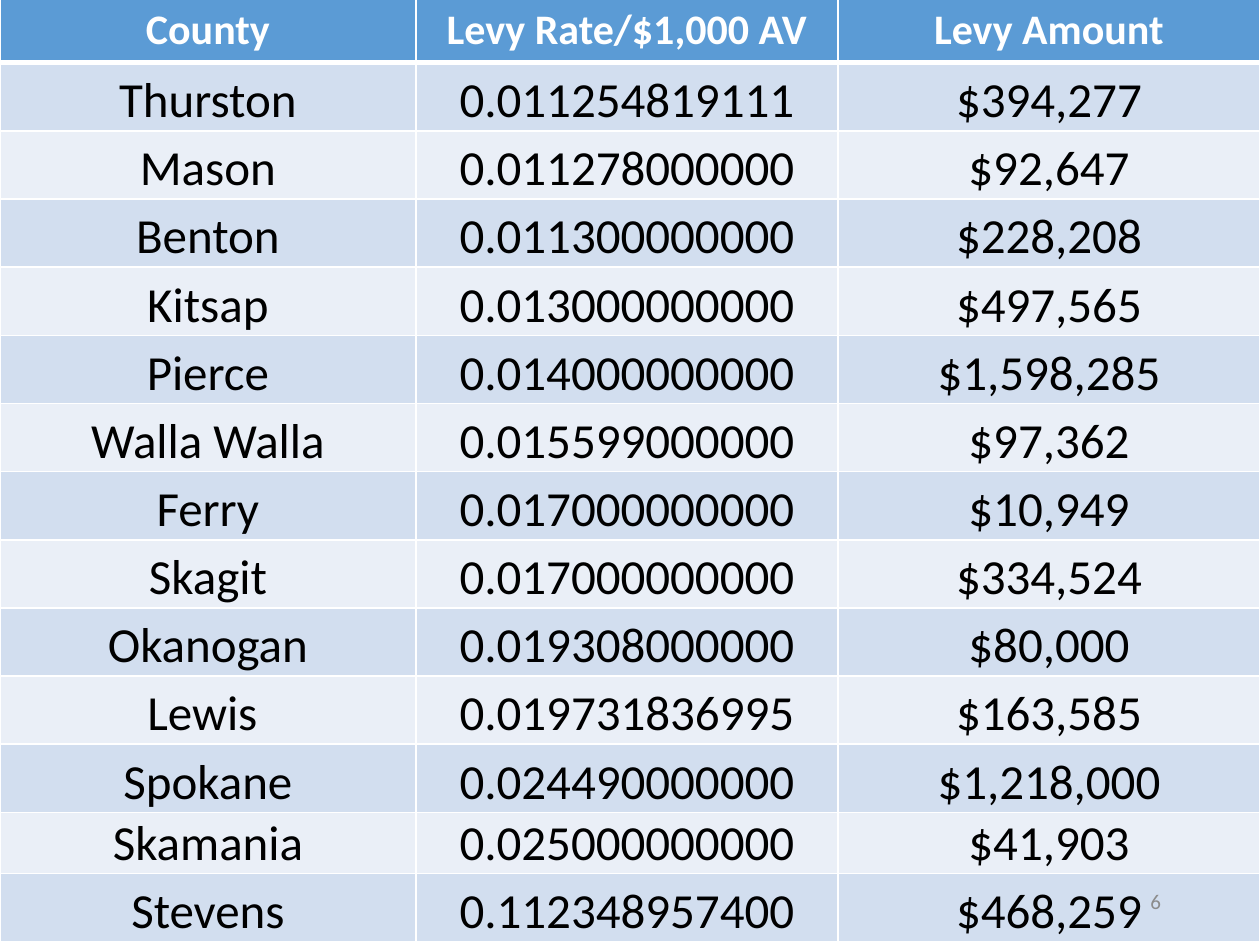
import pptx
import pptx.dml.color
import pptx.enum.text
import pptx.oxml
import pptx.oxml.ns
import pptx.util

Pt = pptx.util.Pt
ALIGN = pptx.enum.text.PP_ALIGN
ANCHOR = pptx.enum.text.MSO_ANCHOR

FONT = "Calibri"
WHITE = "FFFFFF"
HEADER_FILL = "5B9BD5"
BAND_FILLS = ["D2DEEF", "EAEFF7"]
COLUMN_WIDTHS = [237.6, 241.2, 241.2]
HEADER_HEIGHT = 35.28
ROW_HEIGHT = 38.95
SHORT_ROW_HEIGHT = 33.84

HEADINGS = ("County", "Levy Rate/$1,000 AV", "Levy Amount")
LEVIES = [
    ("Thurston", "0.011254819111", "$394,277"),
    ("Mason", "0.011278000000", "$92,647"),
    ("Benton", "0.011300000000", "$228,208"),
    ("Kitsap", "0.013000000000", "$497,565"),
    ("Pierce", "0.014000000000", "$1,598,285"),
    ("Walla Walla", "0.015599000000", "$97,362"),
    ("Ferry", "0.017000000000", "$10,949"),
    ("Skagit", "0.017000000000", "$334,524"),
    ("Okanogan", "0.019308000000", "$80,000"),
    ("Lewis ", "0.019731836995", "$163,585"),
    ("Spokane", "0.024490000000", "$1,218,000"),
    ("Skamania", "0.025000000000", "$41,903"),
    ("Stevens", "0.112348957400", "$468,259"),
]


def color(value):
    return pptx.dml.color.RGBColor.from_string(value)


def add_run(paragraph, text, size, text_color, bold=False):
    run = paragraph.add_run()
    run.text = text
    run.font.name = FONT
    run.font.size = Pt(size)
    run.font.bold = bold
    run.font.color.rgb = color(text_color)


def set_borders(cell, top, bottom):
    properties = cell._tc.get_or_add_tcPr()
    widths = {"lnL": 1, "lnR": 1, "lnT": top, "lnB": bottom}
    for position, (side, width) in enumerate(widths.items()):
        border = pptx.oxml.parse_xml(
            f'<a:{side} {pptx.oxml.ns.nsdecls("a")} w="{Pt(width)}">'
            f'<a:solidFill><a:srgbClr val="{WHITE}"/></a:solidFill></a:{side}>'
        )
        properties.insert(position, border)


def fill_cell(cell, text, fill, size, text_color, bold):
    cell.fill.solid()
    cell.fill.fore_color.rgb = color(fill)
    paragraph = cell.text_frame.paragraphs[0]
    paragraph.alignment = ALIGN.CENTER
    add_run(paragraph, text, size, text_color, bold)


def add_levy_table(slide, left, top, width, height):
    rows = [HEADINGS] + LEVIES
    shape = slide.shapes.add_table(
        len(rows), len(HEADINGS), Pt(left), Pt(top), Pt(width), Pt(height)
    )
    table = shape.table
    for column, column_width in zip(table.columns, COLUMN_WIDTHS):
        column.width = Pt(column_width)
    for index, values in enumerate(rows):
        if index == 0:
            row_height = HEADER_HEIGHT
        elif values[0] == "Skamania":
            row_height = SHORT_ROW_HEIGHT
        else:
            row_height = ROW_HEIGHT
        table.rows[index].height = Pt(row_height)
        for cell, text in zip(table.rows[index].cells, values):
            if index == 0:
                fill_cell(cell, text, HEADER_FILL, 24, WHITE, True)
                set_borders(cell, 1, 3)
            else:
                fill = BAND_FILLS[(index - 1) % 2]
                fill_cell(cell, text, fill, 28, "000000", False)
                cell.vertical_anchor = ANCHOR.BOTTOM
                cell.margin_left = cell.margin_right = cell.margin_top = Pt(0.75)
                cell.margin_bottom = Pt(0)
                set_borders(cell, 3 if index == 1 else 1, 1)


def add_page_number(slide, left, top, width, height):
    shape = slide.shapes.add_textbox(Pt(left), Pt(top), Pt(width), Pt(height))
    frame = shape.text_frame
    frame.word_wrap = True
    frame.vertical_anchor = ANCHOR.MIDDLE
    paragraph = frame.paragraphs[0]
    paragraph.alignment = ALIGN.RIGHT
    add_run(paragraph, "6", 12, "8C8C8C")


def main():
    presentation = pptx.Presentation()
    presentation.slide_width = Pt(720)
    presentation.slide_height = Pt(540)
    slide = presentation.slides.add_slide(presentation.slide_layouts[6])
    add_levy_table(slide, 0, -0.72, 720, 537)
    add_page_number(slide, 508.5, 500.5, 162, 28.75)
    presentation.save("out.pptx")


if __name__ == "__main__":
    main()
